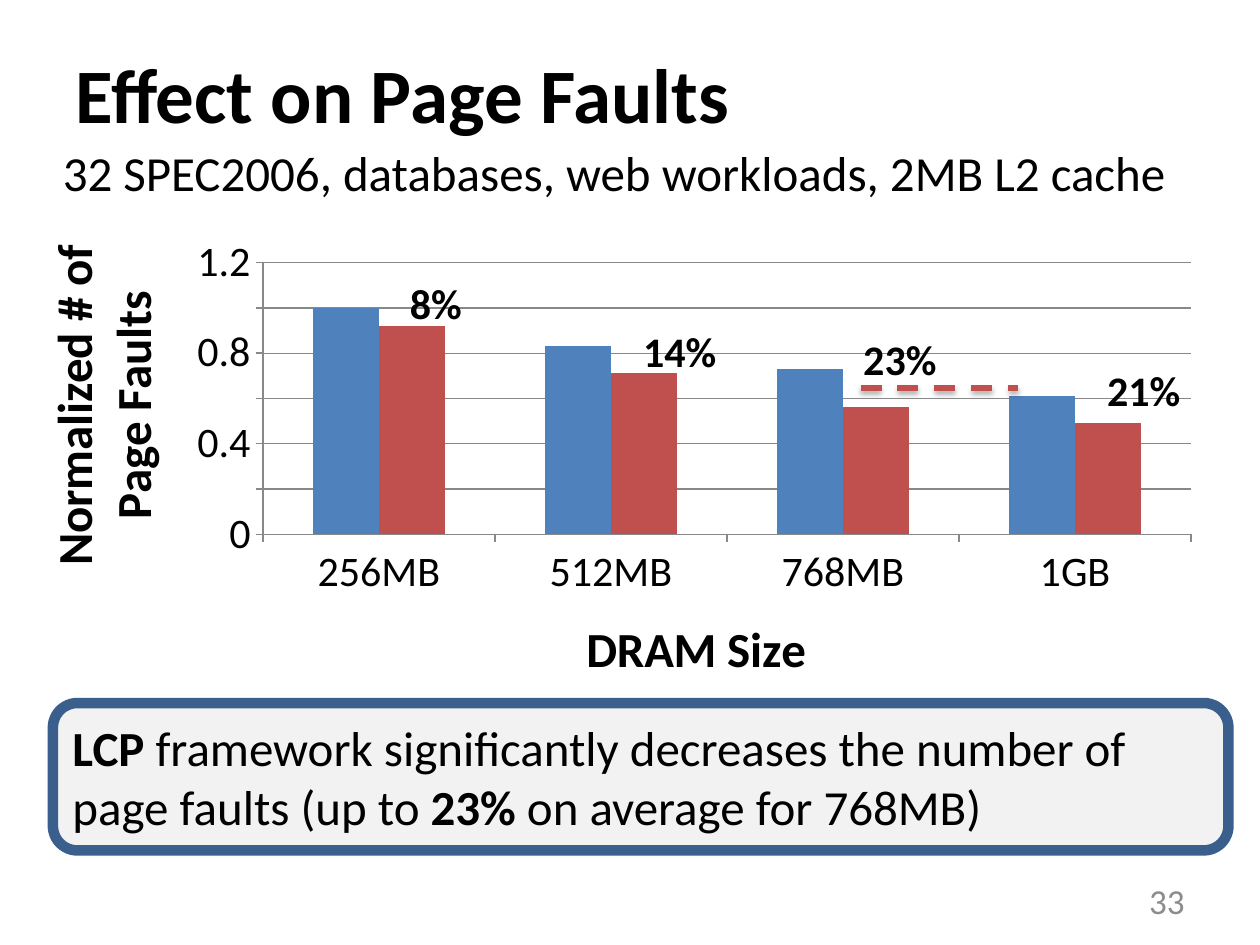
from lxml import etree
from pptx import Presentation
from pptx.chart.data import CategoryChartData
from pptx.dml.color import RGBColor
from pptx.enum.chart import XL_CHART_TYPE, XL_LABEL_POSITION
from pptx.enum.dml import MSO_LINE
from pptx.enum.shapes import MSO_CONNECTOR, MSO_SHAPE
from pptx.enum.text import MSO_ANCHOR, PP_ALIGN
from pptx.oxml import parse_xml
from pptx.oxml.ns import qn
from pptx.util import Inches, Pt

CLUSTERED = XL_CHART_TYPE.COLUMN_CLUSTERED
OUTSIDE_END = XL_LABEL_POSITION.OUTSIDE_END
DASH = MSO_LINE.DASH
STRAIGHT = MSO_CONNECTOR.STRAIGHT
ROUNDED = MSO_SHAPE.ROUNDED_RECTANGLE
MIDDLE, TOP = MSO_ANCHOR.MIDDLE, MSO_ANCHOR.TOP
LEFT, RIGHT = PP_ALIGN.LEFT, PP_ALIGN.RIGHT

TITLE = "Effect on Page Faults"
WORKLOADS = "32 SPEC2006, databases, web workloads, 2MB L2 cache"
PAGE = "33"
FINDING = [
    ("LCP", True),
    (" framework significantly decreases the number of page faults (up to ", False),
    ("23%", True),
    (" on average for 768MB)", False),
]
SIZES = ["256MB", "512MB", "768MB", "1GB"]
SERIES = [
    ("blue", [1, 0.83, 0.73, 0.61]),
    ("red", [0.92, 0.71, 0.56, 0.49]),
]
REDUCTIONS = [
    ("8%", 0.02, 0.02),
    ("14%", 0.03, 0.02),
    ("23%", 0.02, -0.03),
    ("21%", 0.03, 0),
]
THEME = {
    "font": "Calibri",
    "black": RGBColor.from_string("000000"),
    "gray": RGBColor.from_string("8C8C8C"),
    "axis": RGBColor.from_string("888888"),
    "blue": RGBColor.from_string("4F81BD"),
    "red": RGBColor.from_string("C0504D"),
    "panel": RGBColor.from_string("F2F2F2"),
    "border": RGBColor.from_string("3A5F8C"),
    "title": 44,
    "body": 28,
    "tick": 24,
    "page": 20,
}


def style(font, size, color="black", bold=False):
    font.name = THEME["font"]
    font.size = Pt(THEME[size])
    font.color.rgb = THEME[color]
    font.bold = bold


def write(tf, runs, size, color="black", align=LEFT, anchor=MIDDLE):
    tf.word_wrap = True
    tf.vertical_anchor = anchor
    p = tf.paragraphs[0]
    p.alignment = align
    for text, bold in runs:
        r = p.add_run()
        r.text = text
        style(r.font, size, color, bold)


def place(parent, index, x, y, w=None, h=None):
    for old in parent.findall(qn("c:layout")):
        parent.remove(old)
    layout = etree.Element(qn("c:layout"))
    manual = etree.SubElement(layout, qn("c:manualLayout"))
    values = {"x": x, "y": y}
    if w:
        values = {"layoutTarget": "inner", "xMode": "edge", "yMode": "edge",
                  **values, "w": w, "h": h}
    elif parent.tag == qn("c:title"):
        values = {"xMode": "edge", "yMode": "edge", **values}
    for name, value in values.items():
        etree.SubElement(manual, qn("c:" + name)).set("val", str(value))
    parent.insert(index, layout)


def format_axis(axis, title, x, y):
    style(axis.tick_labels.font, "tick")
    axis.format.line.color.rgb = THEME["axis"]
    axis.format.line.width = Pt(0.75)
    tf = axis.axis_title.text_frame
    r = tf.paragraphs[0].add_run()
    r.text = title
    style(r.font, "body", bold=True)
    place(axis.axis_title._element, 1, x, y)
    return tf


def add_fault_chart(s):
    data = CategoryChartData()
    data.categories = SIZES
    for _, values in SERIES:
        data.add_series("", values)
    chart = s.shapes.add_chart(CLUSTERED, Inches(0.25), Inches(1.67),
                               Inches(9.42), Inches(4.14), data).chart
    chart.has_title = False
    chart.has_legend = False
    style(chart.font, "tick")
    place(chart._chartSpace.chart.plotArea, 0, 0.195, 0.1, 0.782, 0.521)

    format_axis(chart.category_axis, "DRAM Size", 0.46, 0.76)
    axis = chart.value_axis
    tf = format_axis(axis, "Normalized # of Page Faults", 0, 0.05)
    tf._txBody.bodyPr.set("rot", "-5400000")
    tf._txBody.bodyPr.set("vert", "horz")
    axis.minimum_scale, axis.maximum_scale, axis.major_unit = 0, 1.2, 0.2
    axis.tick_labels.number_format = "General"
    axis.tick_labels.number_format_is_linked = False
    grid = axis.major_gridlines.format.line
    grid.color.rgb = THEME["axis"]
    grid.width = Pt(0.75)

    plot = chart.plots[0]
    plot.gap_width = 150
    plot.overlap = 0
    plot.vary_by_categories = False
    for series, (color, _) in zip(plot.series, SERIES):
        series.format.fill.solid()
        series.format.fill.fore_color.rgb = THEME[color]
    reduced = plot.series[1]
    for i, (text, dx, dy) in enumerate(REDUCTIONS):
        label = reduced.points[i].data_label
        r = label.text_frame.paragraphs[0].add_run()
        r.text = text
        style(r.font, "tick", bold=True)
        label.position = OUTSIDE_END
        place(label._dLbl, 1, dx, dy)
    for leader in reduced.data_labels._element.findall(qn("c:showLeaderLines")):
        leader.set("val", "0")


def add_dashed_line(s):
    line = s.shapes.add_connector(STRAIGHT, Inches(6.83), Inches(3.08),
                                  Inches(8.08), Inches(3.08))
    line.line.color.rgb = THEME["red"]
    line.line.width = Pt(3)
    line.line.dash_style = DASH
    line._element.spPr.append(parse_xml(
        '<a:effectLst xmlns:a="http://schemas.openxmlformats.org/drawingml/2006/main">'
        f'<a:outerShdw blurRad="{Pt(3.1)}" dist="{Pt(1.8)}" dir="5400000" rotWithShape="0">'
        '<a:srgbClr val="000000"><a:alpha val="35000"/></a:srgbClr>'
        '</a:outerShdw></a:effectLst>'))


def main():
    prs = Presentation()
    prs.slide_width, prs.slide_height = Inches(10), Inches(7.5)
    s = prs.slides.add_slide(prs.slide_layouts[5])

    title = s.shapes.title
    title.left, title.top = Inches(0.5), Inches(0.3)
    title.width, title.height = Inches(9), Inches(0.87)
    write(title.text_frame, [(TITLE, True)], "title")

    page = s.shapes.add_textbox(Inches(7.17), Inches(6.95), Inches(2.33), Inches(0.4))
    write(page.text_frame, [(PAGE, False)], "page", "gray", RIGHT)

    workloads = s.shapes.add_textbox(Inches(0.4), Inches(1.08), Inches(9), Inches(0.58))
    write(workloads.text_frame, [(WORKLOADS, False)], "body", anchor=TOP)

    box = s.shapes.add_shape(ROUNDED, Inches(0.42), Inches(5.58), Inches(9.33), Inches(1.17))
    box.shadow.inherit = False
    box.fill.solid()
    box.fill.fore_color.rgb = THEME["panel"]
    box.line.color.rgb = THEME["border"]
    box.line.width = Pt(6)
    write(box.text_frame, FINDING, "body")

    add_fault_chart(s)
    add_dashed_line(s)
    prs.save("out.pptx")


if __name__ == "__main__":
    main()
